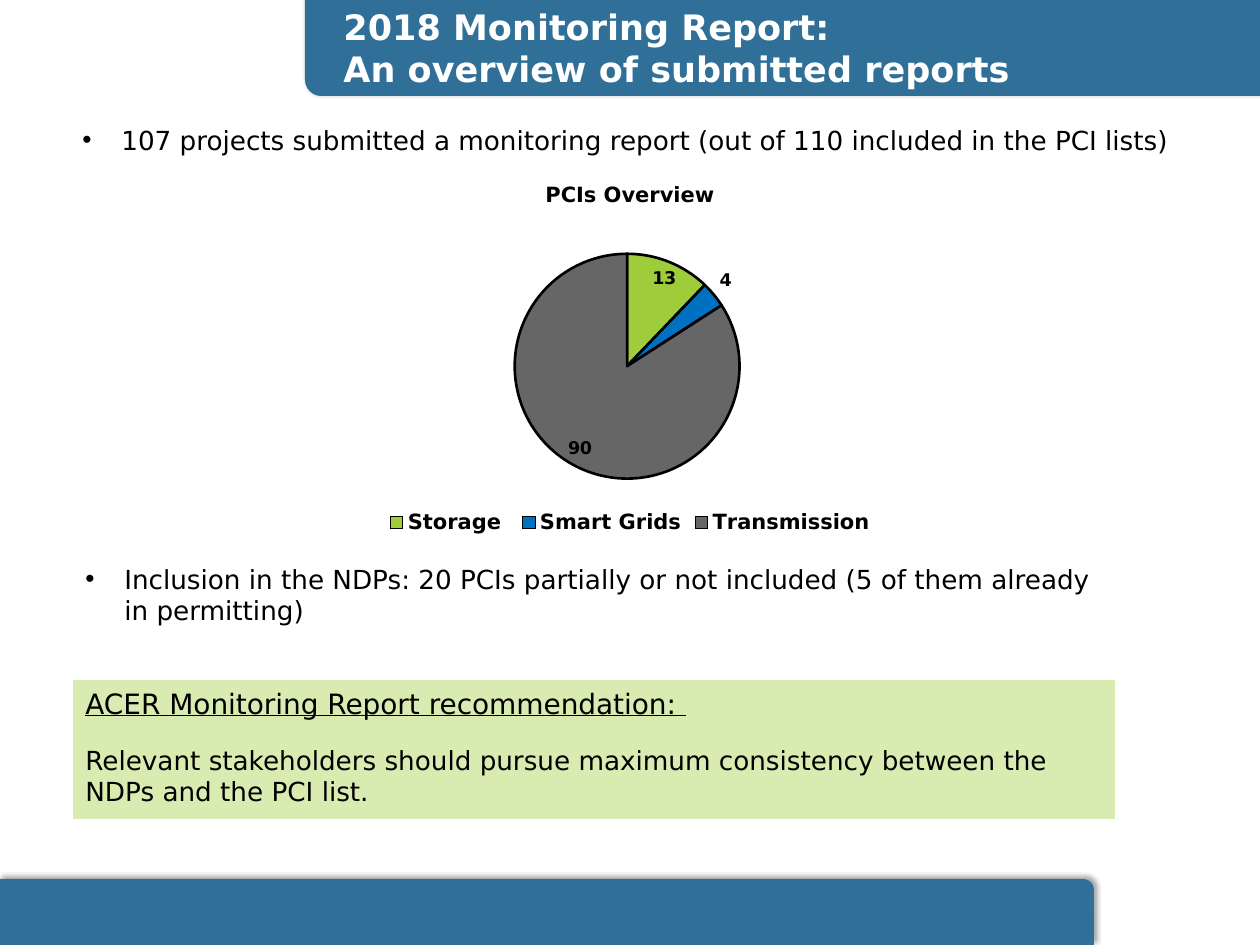
"""Build the slide on submitted monitoring reports."""
from dataclasses import dataclass
from typing import Any

from lxml import etree
from pptx import Presentation
from pptx.chart.data import CategoryChartData
from pptx.dml.color import RGBColor
from pptx.enum.chart import XL_CHART_TYPE, XL_LABEL_POSITION, XL_LEGEND_POSITION
from pptx.enum.shapes import MSO_SHAPE
from pptx.enum.text import MSO_ANCHOR, PP_ALIGN
from pptx.oxml import parse_xml
from pptx.oxml.ns import nsdecls, qn
from pptx.util import Pt

PIE = XL_CHART_TYPE.PIE
BEST = XL_LABEL_POSITION.BEST_FIT
BELOW = XL_LEGEND_POSITION.BOTTOM
ROUND, RECT = MSO_SHAPE.ROUND_1_RECTANGLE, MSO_SHAPE.RECTANGLE
TOP, MIDDLE = MSO_ANCHOR.TOP, MSO_ANCHOR.MIDDLE
LEFT = PP_ALIGN.LEFT
SCALE = 914400 / 126
FONT = "DejaVu Sans"
HEX = {"blue": "307098", "pale": "D8EBB1", "white": "FFFFFF", "black": "000000",
       "green": "9ECC3B", "azure": "0070C0", "gray": "666666"}


@dataclass
class Box:
    left: int
    top: int
    width: int
    height: int


@dataclass
class Line:
    text: str
    size: int
    ink: str = "black"
    bold: bool = False
    under: bool = False
    bullet: bool = False
    before: int = 0


@dataclass
class Block:
    box: Box
    lines: list[Line]
    anchor: Any = TOP
    fill: str = ""


@dataclass
class Band:
    box: Box
    turn: int = 0


@dataclass
class Slice:
    name: str
    count: int
    color: str


BANDS = [Band(Box(0, 879, 1094, 66)), Band(Box(305, 0, 955, 96), 180)]
BLOCKS = [
    Block(Box(331, -1, 863, 97), [
        Line("2018 Monitoring Report:", 20, "white", True),
        Line("An overview of submitted reports", 20, "white", True)], MIDDLE),
    Block(Box(70, 118, 1167, 77), [
        Line("107 projects submitted a monitoring report "
             "(out of 110 included in the PCI lists)", 15, bullet=True)]),
    Block(Box(73, 557, 1032, 108), [
        Line("Inclusion in the NDPs: 20 PCIs partially or not included "
             "(5 of them already in permitting)", 15, bullet=True)]),
    Block(Box(73, 680, 1042, 139), [
        Line("ACER Monitoring Report recommendation: ", 16, under=True),
        Line("Relevant stakeholders should pursue maximum consistency "
             "between the NDPs and the PCI list.", 15, before=14)], fill="pale"),
]
SLICES = [Slice("Storage ", 13, "green"), Slice("Smart Grids", 4, "azure"),
          Slice("Transmission", 90, "gray")]
CHART = Box(315, 162, 630, 378)
PLOT = Box(200, 92, 225, 225)


def px(num: int) -> int:
    return round(num * SCALE)


def place(box: Box) -> list[int]:
    return [px(num) for num in (box.left, box.top, box.width, box.height)]


def color(name: str) -> RGBColor:
    return RGBColor.from_string(HEX[name])


def apply(item: Any, form: dict[str, Any]) -> None:
    for key, value in form.items():
        setattr(item, key, value)


def style(font: Any, size: int, ink: str = "black", bold: bool = False,
          under: bool = False) -> None:
    apply(font, {"name": FONT, "size": Pt(size), "bold": bold, "underline": under})
    font.fill.solid()
    font.fill.fore_color.rgb = color(ink)


def paint(shape: Any, name: str) -> None:
    shape.shadow.inherit = False
    shape.fill.solid()
    shape.fill.fore_color.rgb = color(name)
    shape.line.fill.background()


def draw_band(slide: Any, band: Band) -> None:
    shape = slide.shapes.add_shape(ROUND, *place(band.box))
    paint(shape, "blue")
    shape.rotation = band.turn
    glow = parse_xml(
        f'<a:outerShdw {nsdecls("a")} blurRad="{Pt(3.1)}" dist="{Pt(1.8)}" '
        f'dir="{306 * 60000}" rotWithShape="0"><a:srgbClr val="{HEX["black"]}">'
        '<a:alpha val="35000"/></a:srgbClr></a:outerShdw>')
    shape.element.spPr.find(qn("a:effectLst")).append(glow)


def add_bullet(para: Any) -> None:
    props = para._p.get_or_add_pPr()
    props.set("marL", str(px(39)))
    props.set("indent", str(-px(39)))
    etree.SubElement(props, qn("a:buFont")).set("typeface", "Arial")
    etree.SubElement(props, qn("a:buChar")).set("char", "•")


def draw_block(slide: Any, block: Block) -> None:
    if block.fill:
        shape = slide.shapes.add_shape(RECT, *place(block.box))
        paint(shape, block.fill)
    else:
        shape = slide.shapes.add_textbox(*place(block.box))
    frame = shape.text_frame
    apply(frame, {"word_wrap": True, "vertical_anchor": block.anchor})
    for num, line in enumerate(block.lines):
        para = frame.add_paragraph() if num else frame.paragraphs[0]
        para.alignment = LEFT
        if line.before:
            para.space_before = Pt(line.before)
        if line.bullet:
            add_bullet(para)
        run = para.add_run()
        run.text = line.text
        style(run.font, line.size, line.ink, line.bold, line.under)


def set_plot(chart: Any) -> None:
    area = chart.element.find(qn("c:chart")).find(qn("c:plotArea"))
    for old in area.findall(qn("c:layout")):
        area.remove(old)
    parts = {"x": PLOT.left / CHART.width, "y": PLOT.top / CHART.height,
             "w": PLOT.width / CHART.width, "h": PLOT.height / CHART.height}
    sizes = "".join(f'<c:{key} val="{num:.3f}"/>' for key, num in parts.items())
    area.insert(0, parse_xml(
        f'<c:layout {nsdecls("c")}><c:manualLayout><c:layoutTarget val="inner"/>'
        f'<c:xMode val="edge"/><c:yMode val="edge"/>{sizes}'
        '</c:manualLayout></c:layout>'))


def outline(form: Any, width: float) -> None:
    form.line.width = Pt(width)
    form.line.color.rgb = color("black")


def draw_chart(slide: Any) -> None:
    data = CategoryChartData()
    data.categories = [part.name for part in SLICES]
    data.add_series("Series 1", [part.count for part in SLICES])
    chart = slide.shapes.add_chart(PIE, *place(CHART), data).chart
    style(chart.font, 10)
    apply(chart, {"has_title": True, "has_legend": True})
    title = chart.chart_title.text_frame
    title.text = "PCIs Overview"
    style(title.paragraphs[0].runs[0].font, 12, bold=True)
    apply(chart.legend, {"position": BELOW, "include_in_layout": False})
    style(chart.legend.font, 12, bold=True)
    plot = chart.plots[0]
    apply(plot, {"vary_by_categories": True, "has_data_labels": True})
    apply(plot.data_labels, {"show_value": True, "show_percentage": False,
                             "position": BEST})
    style(plot.data_labels.font, 10, bold=True)
    series = plot.series[0]
    outline(series.format, 0.75)
    for num, part in enumerate(SLICES):
        form = series.points[num].format
        form.fill.solid()
        form.fill.fore_color.rgb = color(part.color)
        outline(form, 1.5)
    set_plot(chart)


def main() -> None:
    deck = Presentation()
    apply(deck, {"slide_width": px(1260), "slide_height": px(945)})
    slide = deck.slides.add_slide(deck.slide_layouts[6])
    for band in BANDS:
        draw_band(slide, band)
    for block in BLOCKS:
        draw_block(slide, block)
    draw_chart(slide)
    deck.save("out.pptx")


if __name__ == "__main__":
    main()
